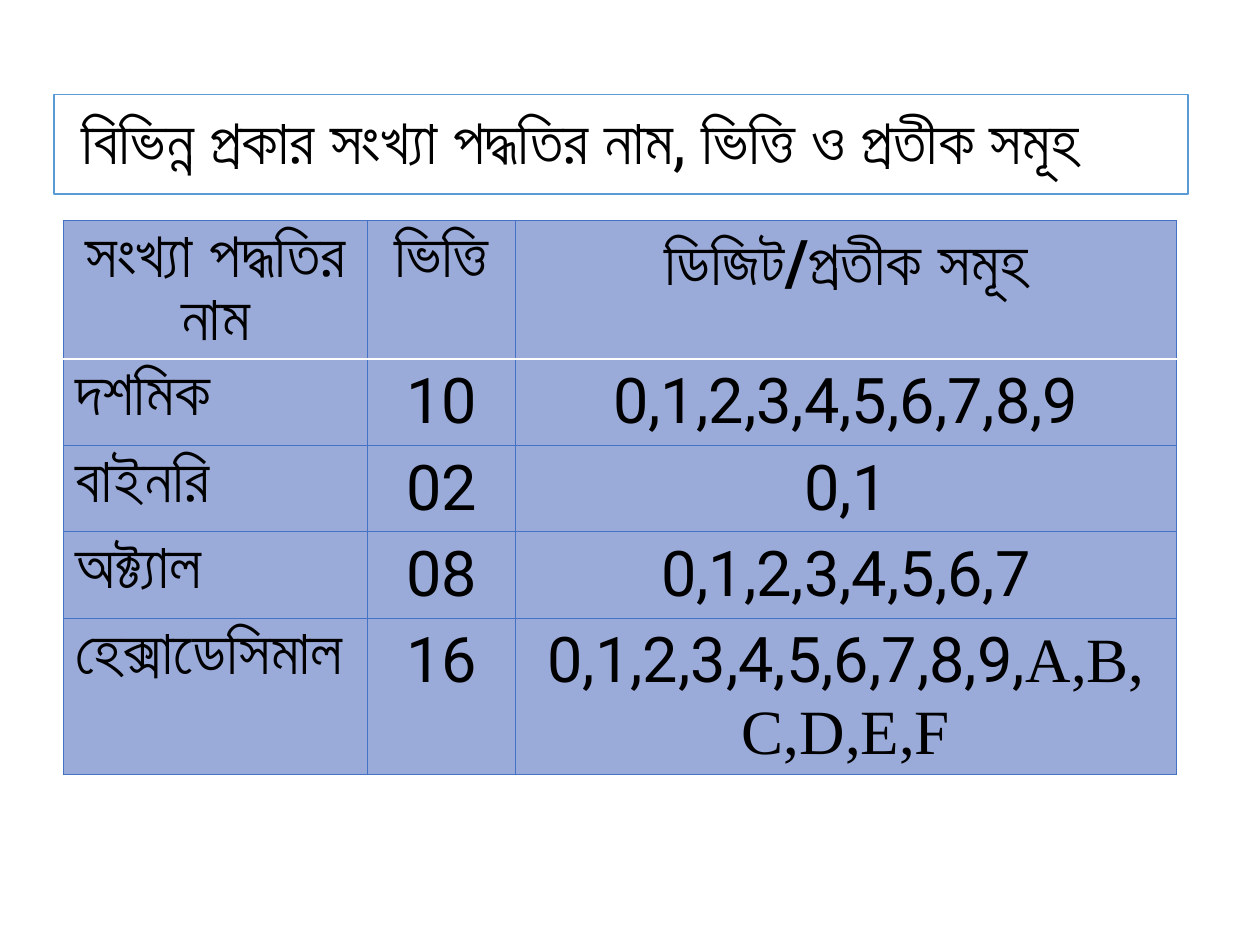
from lxml.etree import SubElement
from pptx import Presentation
from pptx.dml.color import RGBColor
from pptx.enum.text import MSO_ANCHOR, MSO_AUTO_SIZE, PP_ALIGN
from pptx.oxml.ns import qn
from pptx.util import Inches, Pt

# Content
TITLE = "বিভিন্ন প্রকার সংখ্যা পদ্ধতির নাম, ভিত্তি ও প্রতীক সমূহ"
HEADER = ("সংখ্যা পদ্ধতির নাম", "ভিত্তি", "ডিজিট/প্রতীক সমূহ")
SYSTEMS = [
    ("দশমিক", "10", "0,1,2,3,4,5,6,7,8,9"),
    ("বাইনরি", "02", "0,1"),
    ("অক্ট্যাল", "08", "0,1,2,3,4,5,6,7"),
    ("হেক্সাডেসিমাল", "16", "0,1,2,3,4,5,6,7,8,9,"),
]
HEX_LETTERS = "A,B,C,D,E,F"

# Look and grid, in inches and points
FONT, LETTER_FONT, SIZE = "Roboto", "Times New Roman", 36
BLACK, WHITE = "000000", "FFFFFF"
TITLE_LINE, GRID_LINE, CELL_FILL = "5B9BD5", "4472C4", "9BABD9"
COLUMNS = (2.42, 1.17, 5.25)
ROWS = (1.1, 0.68, 0.68, 0.68, 1.24)


def color(value):
    return RGBColor.from_string(value)


def style(paragraph, align, bold=False):
    paragraph.alignment = align
    font = paragraph.font
    font.name, font.size, font.bold = FONT, Pt(SIZE), bold
    font.color.rgb = color(BLACK)


def add_border(cell, side, line_color, points):
    line = SubElement(cell._tc.get_or_add_tcPr(), qn(f"a:ln{side}"), w=str(Pt(points)))
    SubElement(SubElement(line, qn("a:solidFill")), qn("a:srgbClr"), val=line_color)


prs = Presentation()
prs.slide_width, prs.slide_height = Inches(10), Inches(7.5)
slide = prs.slides.add_slide(prs.slide_layouts[5])

# Title box
title = slide.shapes.title
title.left, title.top, title.width, title.height = map(Inches, (0.43, 0.75, 9, 0.79))
title.fill.solid()
title.fill.fore_color.rgb = color(WHITE)
title.line.color.rgb = color(TITLE_LINE)
title.line.width = Pt(1)
frame = title.text_frame
frame.text = TITLE
frame.auto_size = MSO_AUTO_SIZE.NONE
frame.vertical_anchor = MSO_ANCHOR.MIDDLE
frame.margin_left = Inches(0.22)
style(frame.paragraphs[0], PP_ALIGN.LEFT)
frame.paragraphs[0].line_spacing = 0.9

# Table of number systems
records = [HEADER] + SYSTEMS
table = slide.shapes.add_table(
    len(ROWS), len(COLUMNS), Inches(0.5), Inches(1.75),
    Inches(sum(COLUMNS)), Inches(sum(ROWS))).table
for column, width in zip(table.columns, COLUMNS):
    column.width = Inches(width)
for row, height in zip(table.rows, ROWS):
    row.height = Inches(height)

for r, record in enumerate(records):
    for c, text in enumerate(record):
        cell = table.cell(r, c)
        cell.text = text
        is_name = r > 0 and c == 0
        style(cell.text_frame.paragraphs[0],
              PP_ALIGN.LEFT if is_name else PP_ALIGN.CENTER, bold=r == 0)
        for side in "LRTB":
            under_header = (r, side) in ((0, "B"), (1, "T"))
            add_border(cell, side, *((WHITE, 1) if under_header else (GRID_LINE, 0.5)))
        cell.fill.solid()
        cell.fill.fore_color.rgb = color(CELL_FILL)

# Hexadecimal letters in their own font
letters = table.cell(len(SYSTEMS), 2).text_frame.paragraphs[0].add_run()
letters.text = HEX_LETTERS
letters.font.name = LETTER_FONT

prs.save("out.pptx")
